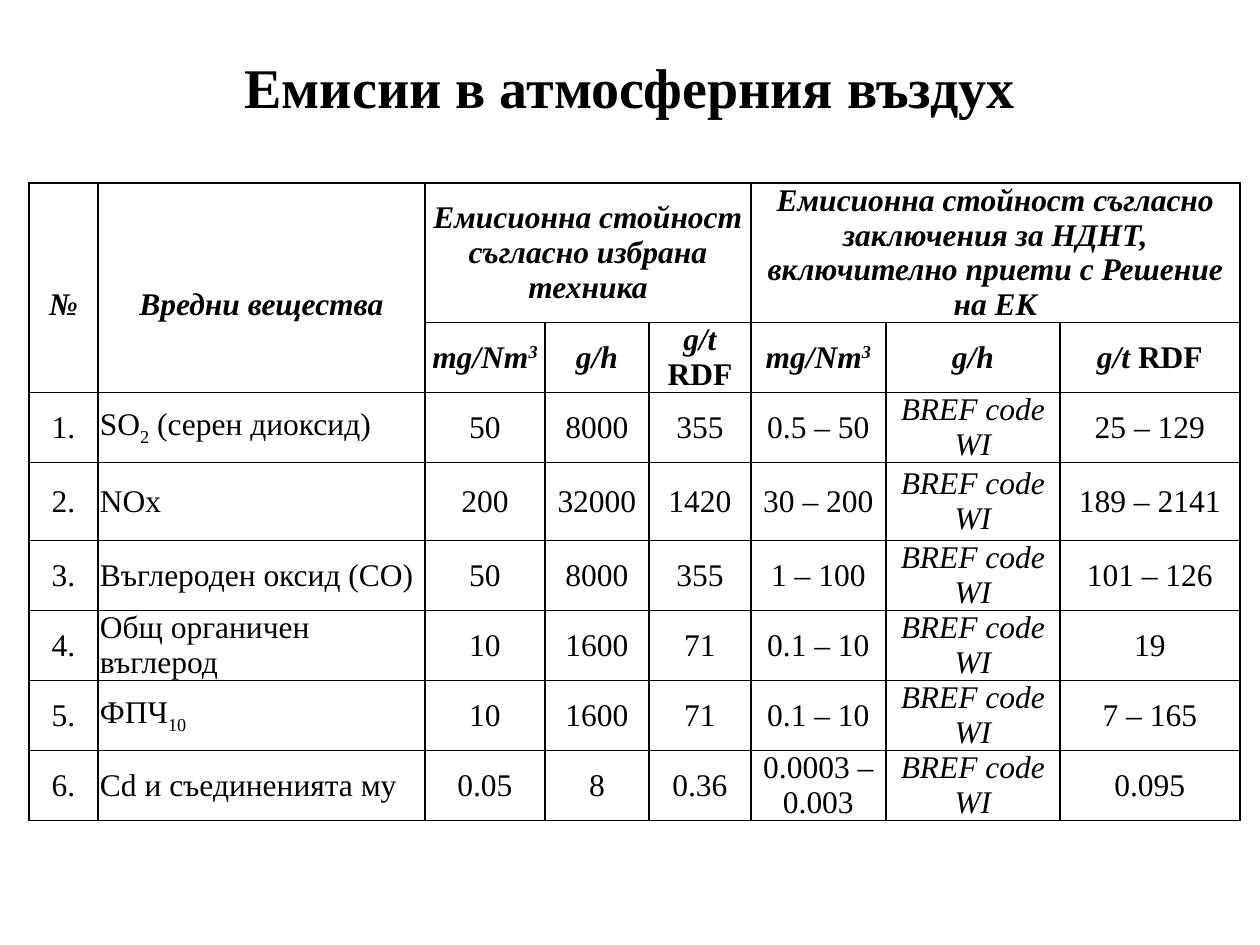
from typing import NamedTuple, Optional

from lxml.etree import SubElement
from pptx import Presentation
from pptx.dml.color import RGBColor
from pptx.enum.text import MSO_ANCHOR, MSO_AUTO_SIZE, PP_ALIGN
from pptx.oxml.ns import qn
from pptx.util import Emu, Pt

PX = 914400 // 126
COLORS = {"ink": "000000"}
FONT = "Times New Roman"
NO_STYLE = "{2D5ABB26-0587-4C30-8999-92F81FD0307C}"
LINE_HEIGHT = 35
COLUMN_WIDTHS = [69, 327, 120, 104, 102, 135, 174, 180]
ROW_HEIGHTS = [139, 70, 70, 78, 70, 70, 70, 70]
HEAVY_COLUMN_EDGES = {0, 2, 5, 8}


class Run(NamedTuple):
    """A piece of text that may be raised, lowered or slanted."""
    text: str
    baseline: int = 0
    italic: Optional[bool] = None


UNITS = [[Run("mg/Nm"), Run("3", 30000)], [Run("g/h")],
         [Run("g/t "), Run("RDF", italic=False)]]
HEADINGS = [
    (0, 0, 2, 1, "№"),
    (0, 1, 2, 1, "Вредни вещества"),
    (0, 2, 1, 3, "Емисионна стойност съгласно избрана техника"),
    (0, 5, 1, 3, "Емисионна стойност съгласно заключения за НДНТ, "
                 "включително приети с Решение на ЕК"),
]
BREF = "ВREF сode WI"
POLLUTANTS = [
    ([Run("SO"), Run("2", -25000), Run(" (серен диоксид)")],
     "50", "8000", "355", "0.5 – 50", "25 – 129"),
    ([Run("NOx")], "200", "32000", "1420", "30 – 200", "189 – 2141"),
    ([Run("Въглероден оксид (CO)")], "50", "8000", "355", "1 – 100", "101 – 126"),
    ([Run("Общ органичен въглерод")], "10", "1600", "71", "0.1 – 10", "19"),
    ([Run("ФПЧ"), Run("10", -25000)], "10", "1600", "71", "0.1 – 10", "7 – 165"),
    ([Run("Cd и съединенията му")], "0.05", "8", "0.36", "0.0003 –\n0.003", "0.095"),
]


def px(length):
    """Turn a length in px into EMU."""
    return Emu(length * PX)


def style_paragraph(paragraph, size, bold, italic, align):
    """Give a paragraph the slide's typeface and alignment."""
    paragraph.alignment = align
    font = paragraph.font
    font.name, font.size, font.bold, font.italic = FONT, Pt(size), bold, italic
    font.color.rgb = RGBColor.from_string(COLORS["ink"])


def add_runs(paragraph, runs):
    """Append runs, with their own baseline and slant."""
    for piece in runs:
        run = paragraph.add_run()
        run.text = piece.text
        if piece.italic is not None:
            run.font.italic = piece.italic
        if piece.baseline:
            run.font._element.set("baseline", str(piece.baseline))


def draw_edges(cell, row, column, row_span, column_span):
    """Rule the four edges of a cell, heavier around column groups."""
    right = column + column_span
    widths = {
        "a:lnL": 1.5 if column in HEAVY_COLUMN_EDGES else 1,
        "a:lnR": 1.5 if right in HEAVY_COLUMN_EDGES else 1,
        "a:lnT": 1.5 if row == 0 else 1,
        "a:lnB": 1,
    }
    properties = cell._tc.get_or_add_tcPr()
    for tag, width in widths.items():
        edge = SubElement(properties, qn(tag), w=str(Pt(width)))
        ink = SubElement(edge, qn("a:solidFill"))
        SubElement(ink, qn("a:srgbClr"), val=COLORS["ink"])


def fill_cell(table, row, column, lines, bold=False, italic=False,
              align=PP_ALIGN.CENTER, spans=(1, 1)):
    """Write lines of runs into a cell, merged over its spans, and rule it."""
    cell = table.cell(row, column)
    if spans != (1, 1):
        cell.merge(table.cell(row + spans[0] - 1, column + spans[1] - 1))
    cell.vertical_anchor = MSO_ANCHOR.MIDDLE
    cell.margin_left = cell.margin_right = px(2)
    cell.margin_top = px(LINE_HEIGHT if spans[0] > 1 else 0)
    cell.margin_bottom = 0
    draw_edges(cell, row, column, *spans)
    cell.fill.background()
    frame = cell.text_frame
    for index, runs in enumerate(lines):
        paragraph = frame.add_paragraph() if index else frame.paragraphs[0]
        style_paragraph(paragraph, 18, bold, italic, align)
        add_runs(paragraph, runs)


def add_title(slide, left, top, width, height):
    """Place the slide title in its placeholder."""
    title = slide.shapes.title
    title.left, title.top = px(left), px(top)
    title.width, title.height = px(width), px(height)
    frame = title.text_frame
    frame.text = "Емисии в атмосферния въздух"
    frame.auto_size = MSO_AUTO_SIZE.NONE
    frame.vertical_anchor = MSO_ANCHOR.TOP
    frame.margin_top = px(14)
    style_paragraph(frame.paragraphs[0], 32, True, False, PP_ALIGN.CENTER)


def add_emissions(slide, left, top):
    """Build the table of emission values per pollutant."""
    graphic = slide.shapes.add_table(
        len(ROW_HEIGHTS), len(COLUMN_WIDTHS), px(left), px(top),
        px(sum(COLUMN_WIDTHS)), px(sum(ROW_HEIGHTS)))
    table = graphic.table
    table.first_row = table.horz_banding = False
    next(graphic._element.iter(qn("a:tableStyleId"))).text = NO_STYLE
    for column, width in zip(table.columns, COLUMN_WIDTHS):
        column.width = px(width)
    for row, height in zip(table.rows, ROW_HEIGHTS):
        row.height = px(height)

    for row, column, row_span, column_span, heading in HEADINGS:
        fill_cell(table, row, column, [[Run(heading)]], bold=True, italic=True,
                  spans=(row_span, column_span))
    for column, unit in enumerate(UNITS * 2, start=2):
        fill_cell(table, 1, column, [unit], bold=True, italic=True)
    for number, (substance, *chosen, reference) in enumerate(POLLUTANTS, start=1):
        row = number + 1
        fill_cell(table, row, 0, [[Run(f"{number}.")]])
        fill_cell(table, row, 1, [substance], align=PP_ALIGN.LEFT)
        for column, value in enumerate([*chosen, BREF, reference], start=2):
            lines = [[Run(line)] for line in value.split("\n")]
            fill_cell(table, row, column, lines, italic=value == BREF)


def main():
    """Build and save the slide."""
    presentation = Presentation()
    presentation.slide_width, presentation.slide_height = px(1260), px(945)
    slide = presentation.slides.add_slide(presentation.slide_layouts[5])
    add_title(slide, 63, 39, 1134, 108)
    add_emissions(slide, 29, 183)
    presentation.save("out.pptx")


if __name__ == "__main__":
    main()
